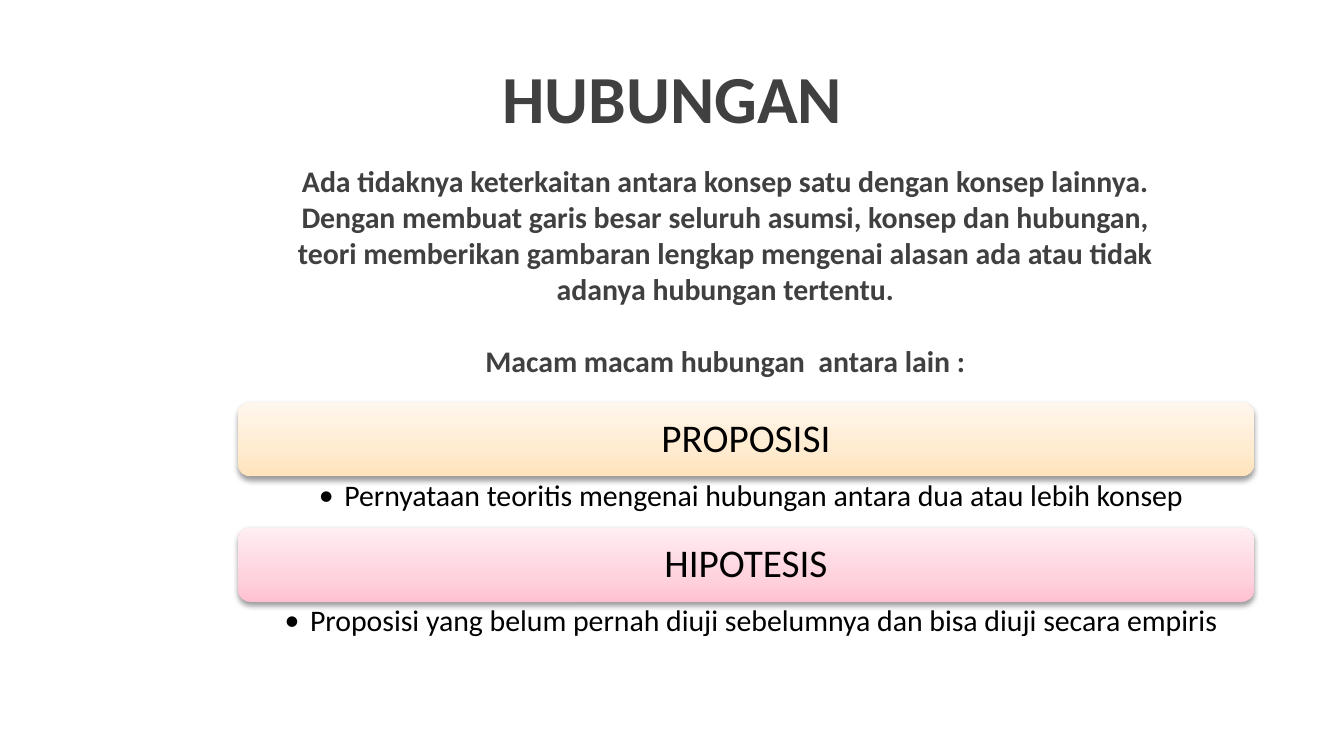
from collections import namedtuple

from lxml.etree import SubElement
from pptx import Presentation
from pptx.dml.color import RGBColor
from pptx.enum.shapes import MSO_SHAPE as Shape
from pptx.enum.text import MSO_ANCHOR as Anchor, PP_ALIGN as Align
from pptx.oxml import parse_xml
from pptx.oxml.ns import nsdecls, qn
from pptx.util import Cm, Pt

Box = namedtuple("Box", "left top width height")
FONT = "Calibri"
GREY, BLACK = "404040", "000000"

INTRO = [
    "Ada tidaknya keterkaitan antara konsep satu dengan konsep lainnya. "
    "Dengan membuat garis besar seluruh asumsi, konsep dan hubungan, "
    "teori memberikan gambaran lengkap mengenai alasan ada atau tidak "
    "adanya hubungan tertentu.",
    "Macam macam hubungan  antara lain :",
]
# Heading, explanation, gradient from bottom to top
RELATIONS = [
    ("PROPOSISI",
     "Pernyataan teoritis mengenai hubungan antara dua atau lebih konsep",
     ("FFE3BB", "FFEBCF", "FFF7ED")),
    ("HIPOTESIS",
     "Proposisi yang belum pernah diuji sebelumnya dan bisa diuji secara empiris",
     ("FFC1D1", "FFD3DE", "FFEEF2")),
]
BAR_HEIGHT = 1.4


def color(code):
    return RGBColor.from_string(code)


def lengths(box):
    return [Cm(value) for value in box]


def write(para, text, size, code, bold=False):
    para.text = text
    para.alignment = Align.CENTER
    for span in para.runs:
        span.font.name = FONT
        span.font.size = Pt(size)
        span.font.bold = bold
        span.font.color.rgb = color(code)


def fill_gradient(shape, codes):
    shape.fill.background()
    stops = "".join(
        f'<a:gs pos="{place * 1000}"><a:srgbClr val="{code}"/></a:gs>'
        for place, code in zip((0, 35, 100), codes))
    gradient = parse_xml(
        f'<a:gradFill {nsdecls("a")} rotWithShape="1"><a:gsLst>{stops}</a:gsLst>'
        '<a:lin ang="16200000" scaled="0"/></a:gradFill>')
    properties = shape._element.spPr
    properties.replace(properties.find(qn("a:noFill")), gradient)


def add_shadow(shape):
    shape.shadow.inherit = False
    effects = shape._element.spPr.find(qn("a:effectLst"))
    effects.append(parse_xml(
        f'<a:outerShdw {nsdecls("a")} blurRad="{Pt(3.1)}" dist="{Pt(1.6)}" '
        'dir="5400000" rotWithShape="0"><a:srgbClr val="000000">'
        '<a:alpha val="38000"/></a:srgbClr></a:outerShdw>'))


def add_bullet(para, indent):
    properties = para._p.get_or_add_pPr()
    properties.set("marL", str(Cm(indent)))
    properties.set("indent", str(-Cm(indent)))
    SubElement(properties, qn("a:buFont"), typeface=FONT)
    SubElement(properties, qn("a:buChar"), char="•")


def place_title(page, box):
    title = page.shapes.title
    title.left, title.top, title.width, title.height = lengths(box)
    title.text_frame.vertical_anchor = Anchor.MIDDLE
    write(title.text_frame.paragraphs[0], "HUBUNGAN", 36, GREY, bold=True)


def place_intro(page, box):
    frame = page.shapes.add_textbox(*lengths(box)).text_frame
    frame.word_wrap = True
    frame.text = "\n".join(INTRO)
    for para, text in zip(frame.paragraphs, INTRO):
        write(para, text, 16, GREY, bold=True)
    frame.paragraphs[-1].space_before = Pt(19.5)


def place_relation(page, box, heading, explanation, codes):
    # Heading bar
    bar_box = box._replace(height=BAR_HEIGHT)
    bar = page.shapes.add_shape(Shape.ROUNDED_RECTANGLE, *lengths(bar_box))
    fill_gradient(bar, codes)
    bar.line.fill.background()
    add_shadow(bar)
    bar.text_frame.vertical_anchor = Anchor.MIDDLE
    para = bar.text_frame.paragraphs[0]
    write(para, heading, 21, BLACK)
    para.line_spacing = 0.9

    # Bulleted explanation below the bar
    note_box = box._replace(top=box.top + BAR_HEIGHT,
                            height=box.height - BAR_HEIGHT)
    frame = page.shapes.add_textbox(*lengths(note_box)).text_frame
    frame.word_wrap = True
    frame.margin_left, frame.margin_right = Cm(0.61), Cm(0.41)
    frame.margin_top = frame.margin_bottom = Cm(0.08)
    para = frame.paragraphs[0]
    write(para, explanation, 16, BLACK)
    para.line_spacing = 0.9
    add_bullet(para, 0.48)


def place_relations(page, box):
    step = box.height / len(RELATIONS)
    for index, relation in enumerate(RELATIONS):
        part = box._replace(top=box.top + index * step, height=step)
        place_relation(page, part, *relation)


def main():
    deck = Presentation()
    deck.slide_width, deck.slide_height = Cm(25.4), Cm(14.28)
    page = deck.slides.add_slide(deck.slide_layouts[5])
    place_title(page, Box(2.16, 0.74, 21.1, 2.16))
    place_intro(page, Box(5.11, 2.95, 17.2, 4.37))
    place_relations(page, Box(4.5, 7.6, 19.2, 4.74))
    deck.save("out.pptx")


if __name__ == "__main__":
    main()
